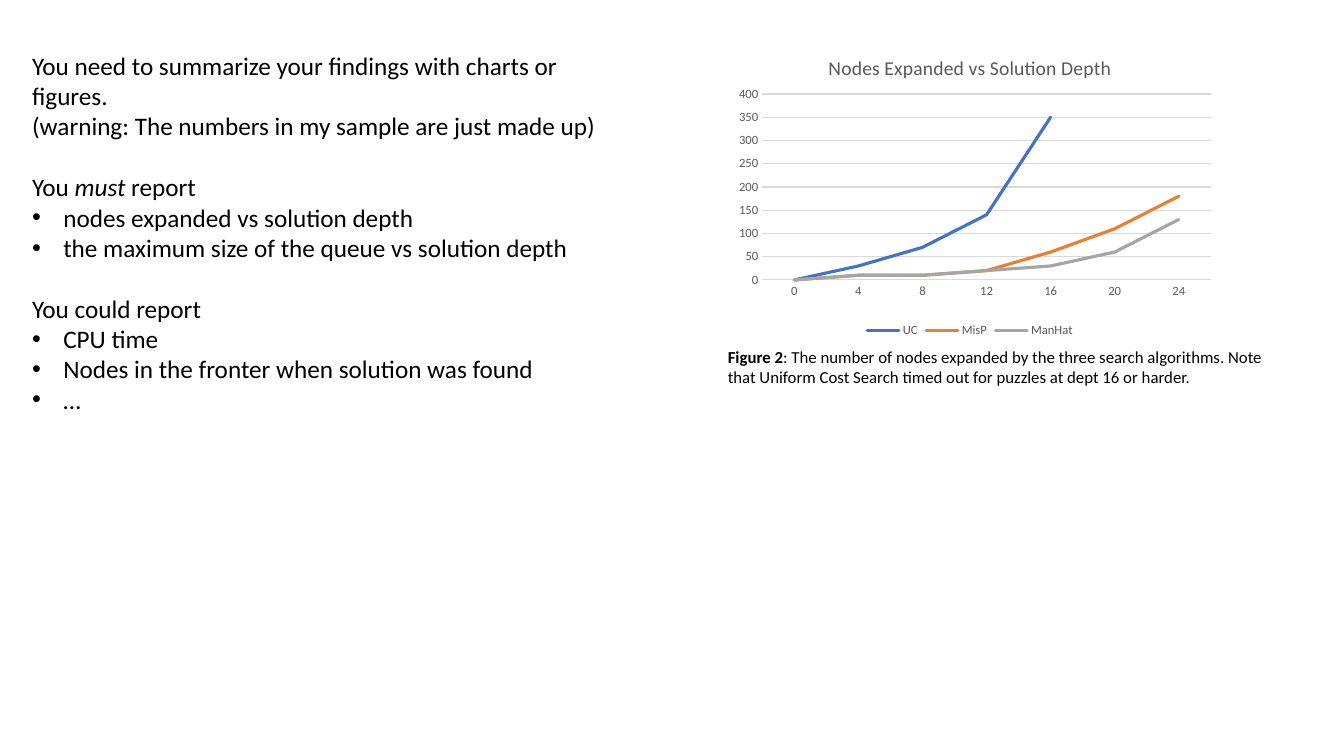
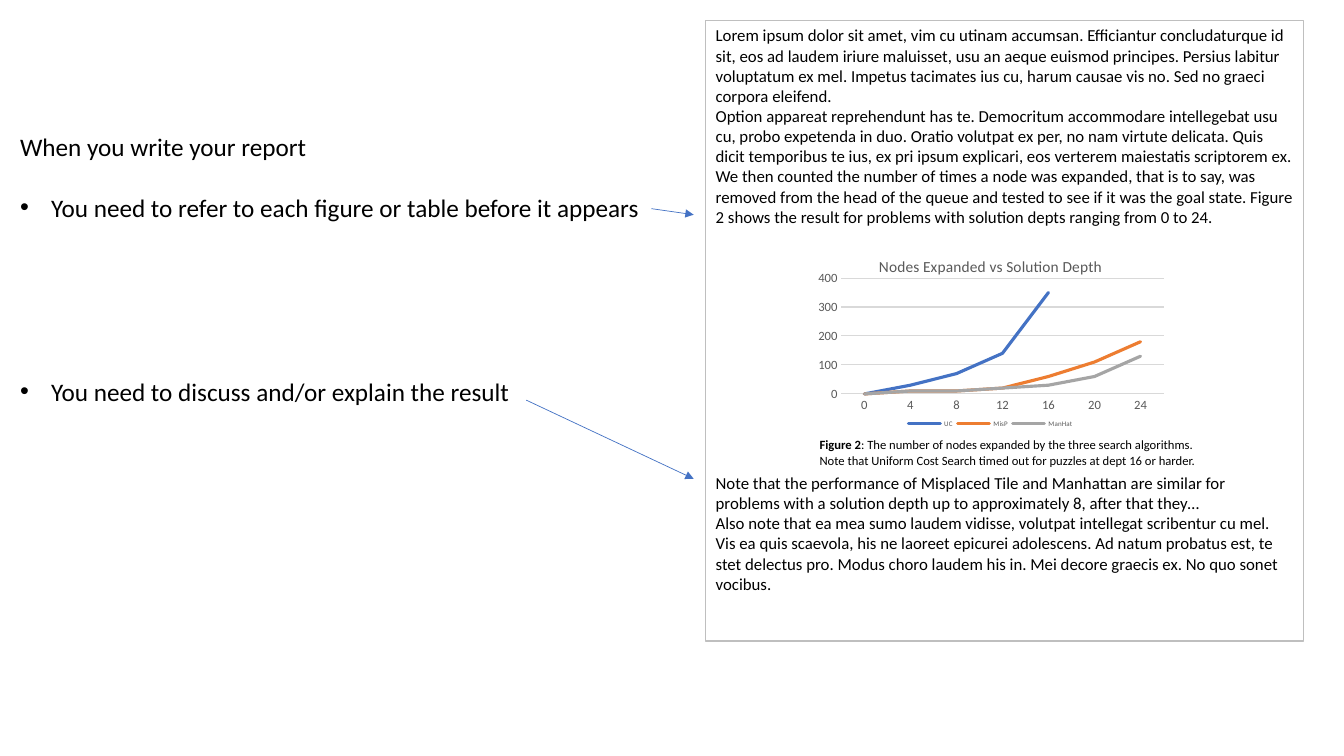
from dataclasses import dataclass

from lxml import etree
from pptx import Presentation
from pptx.chart.data import CategoryChartData
from pptx.dml.color import RGBColor
from pptx.enum.chart import XL_CHART_TYPE, XL_LEGEND_POSITION, XL_TICK_MARK
from pptx.enum.shapes import MSO_CONNECTOR
from pptx.enum.text import MSO_ANCHOR
from pptx.oxml.ns import qn
from pptx.util import Inches, Pt

LINE_CHART = XL_CHART_TYPE.LINE
LEGEND_BOTTOM = XL_LEGEND_POSITION.BOTTOM
NO_TICK = XL_TICK_MARK.NONE
STRAIGHT = MSO_CONNECTOR.STRAIGHT
TOP = MSO_ANCHOR.TOP


@dataclass(frozen=True)
class Theme:
    font: str = "Calibri"
    ink: str = "000000"
    chart_ink: str = "595959"
    grid: str = "D9D9D9"
    border: str = "BFBFBF"
    arrow: str = "4472C4"
    series: tuple = ("4472C4", "ED7D31", "A5A5A5")
    advice: float = 18
    report: float = 12
    axis: float = 9
    hairline: float = 0.75
    series_line: float = 2.25
    arrow_line: float = 0.5
    line_height: float = 1.22
    bullet_indent: float = 0.31


@dataclass(frozen=True)
class Box:
    left: float
    top: float
    width: float
    height: float

    def lengths(self):
        return [Inches(n) for n in (self.left, self.top, self.width, self.height)]


@dataclass(frozen=True)
class Para:
    runs: tuple
    bullet: bool = False
    lines_before: int = 0


@dataclass(frozen=True)
class FigureStyle:
    title: float
    legend: float
    caption: float
    caption_height: float
    chart_width: float
    step: int


THEME = Theme()
DEPTHS = ("0", "4", "8", "12", "16", "20", "24")
NODES_EXPANDED = {
    "UC": (0, 30, 70, 140, 350, None, None),
    "MisP": (0, 10, 10, 20, 60, 110, 180),
    "ManHat": (0, 10, 10, 20, 30, 60, 130),
}
PLOT_AREA = {"x": 0.088, "y": 0.181, "w": 0.89, "h": 0.615}
CAPTION = Para((
    ("Figure 2", "b"),
    (": The number of nodes expanded by the three search algorithms. Note that "
     "Uniform Cost Search timed out for puzzles at dept 16 or harder.", ""),
))


def plain(text, **layout):
    return Para(((text, ""),), **layout)


FINDINGS = (
    plain("You need to summarize your findings with charts or figures."),
    plain("(warning: The numbers in my sample are just made up)"),
    Para((("You ", ""), ("must", "i"), (" report", "")), lines_before=1),
    plain("nodes expanded vs solution depth", bullet=True),
    plain("the maximum size of the queue vs solution depth", bullet=True),
    plain("You could report", lines_before=1),
    plain("CPU time", bullet=True),
    plain("Nodes in the fronter when solution was found", bullet=True),
    plain("…", bullet=True),
)
WRITING_ADVICE = (
    plain("When you write your report"),
    plain("You need to refer to each figure or table before it appears",
          bullet=True, lines_before=1),
    plain("You need to discuss and/or explain the result",
          bullet=True, lines_before=5),
)
SAMPLE_REPORT = (
    plain("Lorem ipsum dolor sit amet, vim cu utinam accumsan. Efficiantur "
          "concludaturque id sit, eos ad laudem iriure maluisset, usu an aeque "
          "euismod principes. Persius labitur voluptatum ex mel. Impetus "
          "tacimates ius cu, harum causae vis no. Sed no graeci corpora eleifend."),
    plain("Option appareat reprehendunt has te. Democritum accommodare "
          "intellegebat usu cu, probo expetenda in duo. Oratio volutpat ex per, "
          "no nam virtute delicata. Quis dicit temporibus te ius, ex pri ipsum "
          "explicari, eos verterem maiestatis scriptorem ex. We then counted the "
          "number of times a node was expanded, that is to say, was removed from "
          "the head of the queue and tested to see if it was the goal state. "
          "Figure 2 shows the result for problems with solution depts ranging "
          "from 0 to 24."),
    plain("Note that the performance of Misplaced Tile and Manhattan are similar "
          "for problems with a solution depth up to approximately 8, after that "
          "they…", lines_before=12),
    plain("Also note that ea mea sumo laudem vidisse, volutpat intellegat "
          "scribentur cu mel. Vis ea quis scaevola, his ne laoreet epicurei "
          "adolescens. Ad natum probatus est, te stet delectus pro. Modus choro "
          "laudem his in. Mei decore graecis ex. No quo sonet vocibus."),
)


def set_font(font, size, color):
    font.name = THEME.font
    font.size = Pt(size)
    font.color.rgb = RGBColor.from_string(color)


def set_line(line, color, width):
    line.color.rgb = RGBColor.from_string(color)
    line.width = Pt(width)


def add_bullet(paragraph):
    props = paragraph._p.get_or_add_pPr()
    indent = Inches(THEME.bullet_indent)
    props.set("marL", str(indent))
    props.set("indent", str(-indent))
    etree.SubElement(props, qn("a:buFont"), typeface="Arial")
    etree.SubElement(props, qn("a:buChar"), char="•")


def add_text(slide, box, paragraphs, *, size, color=THEME.ink, border=None):
    block = slide.shapes.add_textbox(*box.lengths())
    if border:
        set_line(block.line, border, THEME.hairline)
    frame = block.text_frame
    frame.word_wrap = True
    frame.vertical_anchor = TOP
    for index, para in enumerate(paragraphs):
        paragraph = frame.add_paragraph() if index else frame.paragraphs[0]
        if para.lines_before:
            gap = para.lines_before * size * THEME.line_height
            paragraph.space_before = Pt(round(gap, 1))
        if para.bullet:
            add_bullet(paragraph)
        for words, style in para.runs:
            run = paragraph.add_run()
            run.text = words
            set_font(run.font, size, color)
            run.font.bold = style == "b"
            run.font.italic = style == "i"


def fix_plot_area(chart):
    plot_area = chart._chartSpace.chart.plotArea
    layout = plot_area.find(qn("c:layout"))
    if layout is None:
        layout = etree.Element(qn("c:layout"))
        plot_area.insert(0, layout)
    manual = etree.SubElement(layout, qn("c:manualLayout"))
    settings = {"layoutTarget": "inner", "xMode": "edge", "yMode": "edge", **PLOT_AREA}
    for tag, value in settings.items():
        etree.SubElement(manual, qn(f"c:{tag}"), val=str(value))


def style_axes(chart, step):
    depth_axis, node_axis = chart.category_axis, chart.value_axis
    for axis in (depth_axis, node_axis):
        axis.major_tick_mark = NO_TICK
        axis.minor_tick_mark = NO_TICK
        set_font(axis.tick_labels.font, THEME.axis, THEME.chart_ink)
    set_line(depth_axis.format.line, THEME.grid, THEME.hairline)
    node_axis.format.line.fill.background()
    node_axis.minimum_scale, node_axis.maximum_scale = 0, 400
    node_axis.major_unit = step
    set_line(node_axis.major_gridlines.format.line, THEME.grid, THEME.hairline)


def add_node_chart(slide, box, style):
    data = CategoryChartData()
    data.categories = DEPTHS
    for algorithm, counts in NODES_EXPANDED.items():
        data.add_series(algorithm, counts)
    chart = slide.shapes.add_chart(LINE_CHART, *box.lengths(), data).chart
    set_font(chart.font, 10, THEME.ink)
    title = chart.chart_title
    title.include_in_layout = False
    heading = title.text_frame.paragraphs[0].add_run()
    heading.text = "Nodes Expanded vs Solution Depth"
    set_font(heading.font, style.title, THEME.chart_ink)
    heading.font.bold = False
    chart.has_legend = True
    chart.legend.position = LEGEND_BOTTOM
    chart.legend.include_in_layout = False
    set_font(chart.legend.font, style.legend, THEME.chart_ink)
    style_axes(chart, style.step)
    plot = chart.plots[0]
    plot.vary_by_categories = False
    for series, color in zip(plot.series, THEME.series):
        series.smooth = False
        set_line(series.format.line, color, THEME.series_line)
        series.format.line._get_or_add_ln().set("cap", "rnd")
    fix_plot_area(chart)


def add_figure(slide, box, style):
    chart_height = box.height - style.caption_height
    add_node_chart(slide, Box(box.left, box.top, style.chart_width, chart_height), style)
    caption_box = Box(box.left, box.top + chart_height, box.width, style.caption_height)
    add_text(slide, caption_box, (CAPTION,), size=style.caption)


def add_arrow(slide, start, end):
    arrow = slide.shapes.add_connector(STRAIGHT, *map(Inches, start + end))
    set_line(arrow.line, THEME.arrow, THEME.arrow_line)
    etree.SubElement(arrow.line._get_or_add_ln(), qn("a:tailEnd"), type="triangle")
    etree.SubElement(arrow._element.spPr, qn("a:effectLst"))


def add_report_page(slide, box):
    add_text(slide, box, SAMPLE_REPORT, size=THEME.report, border=THEME.border)
    figure_box = Box(box.left + 1.03, box.top + 2.22, 4.02, 2.27)
    add_figure(slide, figure_box, FigureStyle(
        title=11, legend=5, caption=9, caption_height=0.4, chart_width=3.59, step=100))


def build_findings_slide(slide):
    add_figure(slide, Box(7.12, 0.39, 5.6, 3.5), FigureStyle(
        title=14, legend=9, caption=12, caption_height=0.5, chart_width=5, step=50))
    add_text(slide, Box(0.22, 0.45, 5.84, 4.34), FINDINGS, size=THEME.advice)


def build_writing_slide(slide):
    add_report_page(slide, Box(7, 0.2, 5.93, 6.16))
    add_text(slide, Box(0.1, 1.25, 6.42, 2.83), WRITING_ADVICE, size=THEME.advice)
    for start, end in (((6.46, 2.07), (6.88, 2.13)), ((5.22, 3.97), (6.88, 4.75))):
        add_arrow(slide, start, end)


def main():
    deck = Presentation()
    deck.slide_width, deck.slide_height = Inches(13.33), Inches(7.5)
    blank = deck.slide_layouts[6]
    for build in (build_findings_slide, build_writing_slide):
        build(deck.slides.add_slide(blank))
    deck.save("out.pptx")


if __name__ == "__main__":
    main()
